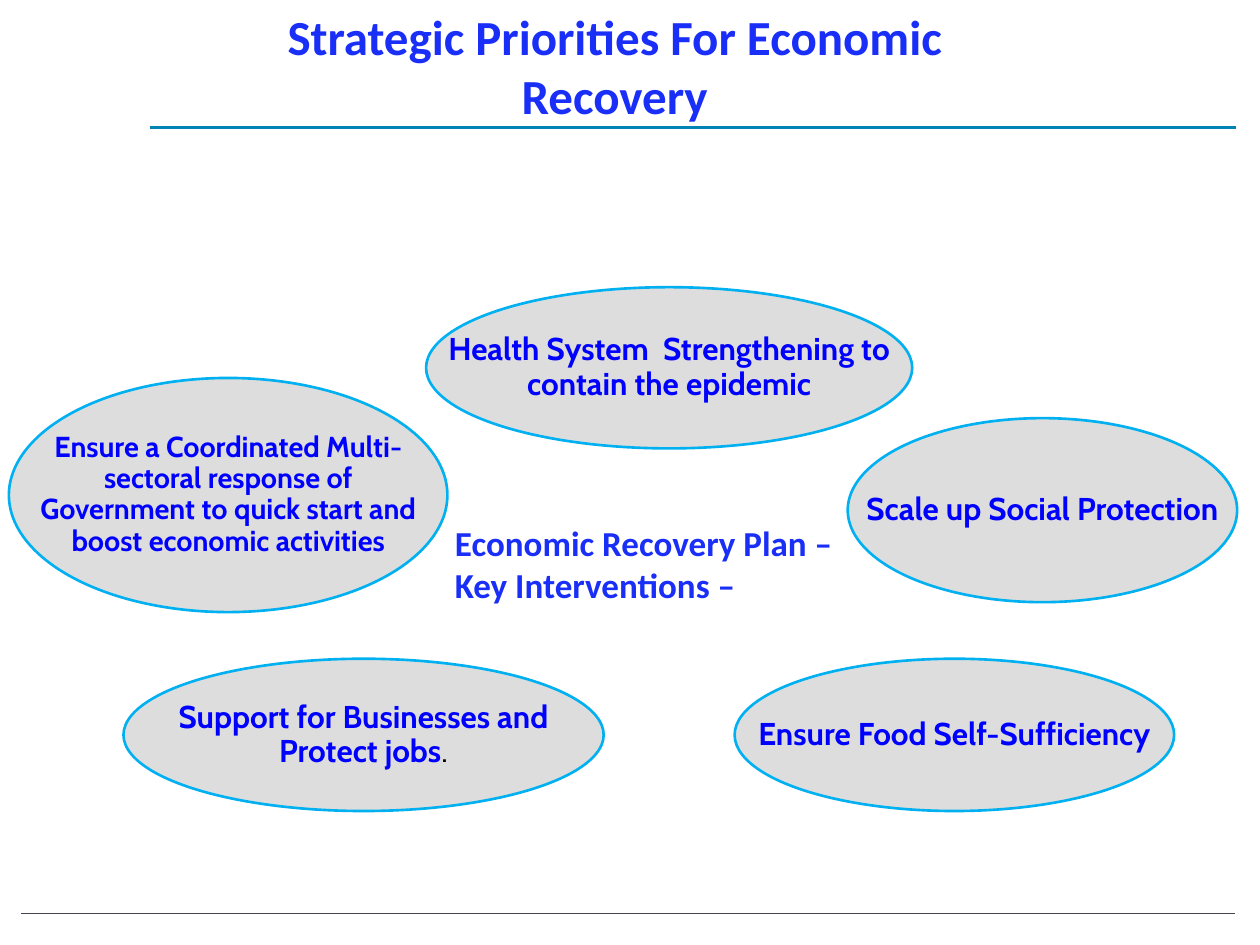
from lxml.etree import SubElement
from pptx import Presentation
from pptx.dml.color import RGBColor
from pptx.enum.shapes import MSO_CONNECTOR, MSO_SHAPE
from pptx.enum.text import MSO_ANCHOR, PP_ALIGN
from pptx.oxml.ns import qn
from pptx.util import Cm, Pt


def color(hex_value):
    return RGBColor.from_string(hex_value)


def add_text(page, area, spans, size=18, font="Cabin", align=PP_ALIGN.CENTER,
             anchor=MSO_ANCHOR.TOP, spacing=1.0, side=0.25, edge=0.13):
    """Add a text box; spans is a list of (text, colour, bold)."""
    box = page.shapes.add_textbox(*[Cm(value) for value in area])
    frame = box.text_frame
    frame.word_wrap = True
    frame.vertical_anchor = anchor
    frame.margin_left = frame.margin_right = Cm(side)
    frame.margin_top = frame.margin_bottom = Cm(edge)
    para = frame.paragraphs[0]
    para.alignment = align
    para.line_spacing = spacing
    for text, hex_value, bold in spans:
        span = para.add_run()
        span.text = text
        span.font.name = font
        span.font.size = Pt(size)
        span.font.bold = bold
        span.font.color.rgb = color(hex_value)


deck = Presentation()
deck.slide_width, deck.slide_height = Cm(25.4), Cm(19.05)
page = deck.slides.add_slide(deck.slide_layouts[6])

HEADING_BLUE = "192EF7"
LABEL_BLUE = "0000FF"

# Footer rule and title rule: left, right, height on the page, colour, width
rules = [
    (0.43, 24.89, 18.42, "464653", 0.75),
    (3.02, 24.92, 2.57, "0084B4", 2.25),
]
for left, right, top, hex_value, width in rules:
    rule = page.shapes.add_connector(
        MSO_CONNECTOR.STRAIGHT, Cm(left), Cm(top), Cm(right), Cm(top))
    rule.line.color.rgb = color(hex_value)
    rule.line.width = Pt(width)
    SubElement(rule._element.spPr, qn("a:effectLst"))

# Title
add_text(page, (4.45, 0, 15.88, 2.24),
         [("Strategic Priorities For Economic Recovery", HEADING_BLUE, True)],
         size=28, font="Calibri")

# Ring of interventions: area, label size, label spans
interventions = [
    ((8.59, 5.79, 9.8, 3.25), 18,
     [("Health System  Strengthening to contain the epidemic", LABEL_BLUE, True)]),
    ((14.81, 13.28, 8.86, 3.07), 18,
     [("Ensure Food Self-Sufficiency", LABEL_BLUE, True)]),
    ((0.18, 7.62, 8.84, 4.72), 16.5,
     [("Ensure a Coordinated Multi-sectoral response of Government "
       "to quick start and boost economic activities", LABEL_BLUE, True)]),
    ((2.49, 13.28, 9.68, 3.07), 18,
     [("Support for Businesses and Protect jobs", LABEL_BLUE, True),
      (".", "000000", False)]),
    ((17.09, 8.43, 7.85, 3.71), 18,
     [("Scale up Social Protection", LABEL_BLUE, True)]),
]
for area, size, spans in interventions:
    oval = page.shapes.add_shape(MSO_SHAPE.OVAL, *[Cm(value) for value in area])
    oval.shadow.inherit = False
    oval.fill.solid()
    oval.fill.fore_color.rgb = color("DDDDDD")
    oval.line.color.rgb = color("00B0F0")
    oval.line.width = Pt(1.5)
    # The label uses the full width of the oval, not only its inner rectangle
    add_text(page, area, spans, size=size, anchor=MSO_ANCHOR.MIDDLE,
             spacing=0.9, side=0.3, edge=0.3)

# Centre caption
add_text(page, (8.92, 10.39, 8.79, 1.96),
         [("Economic Recovery Plan – Key Interventions –", HEADING_BLUE, True)],
         size=20, font="Calibri", align=PP_ALIGN.LEFT)

deck.save("out.pptx")
